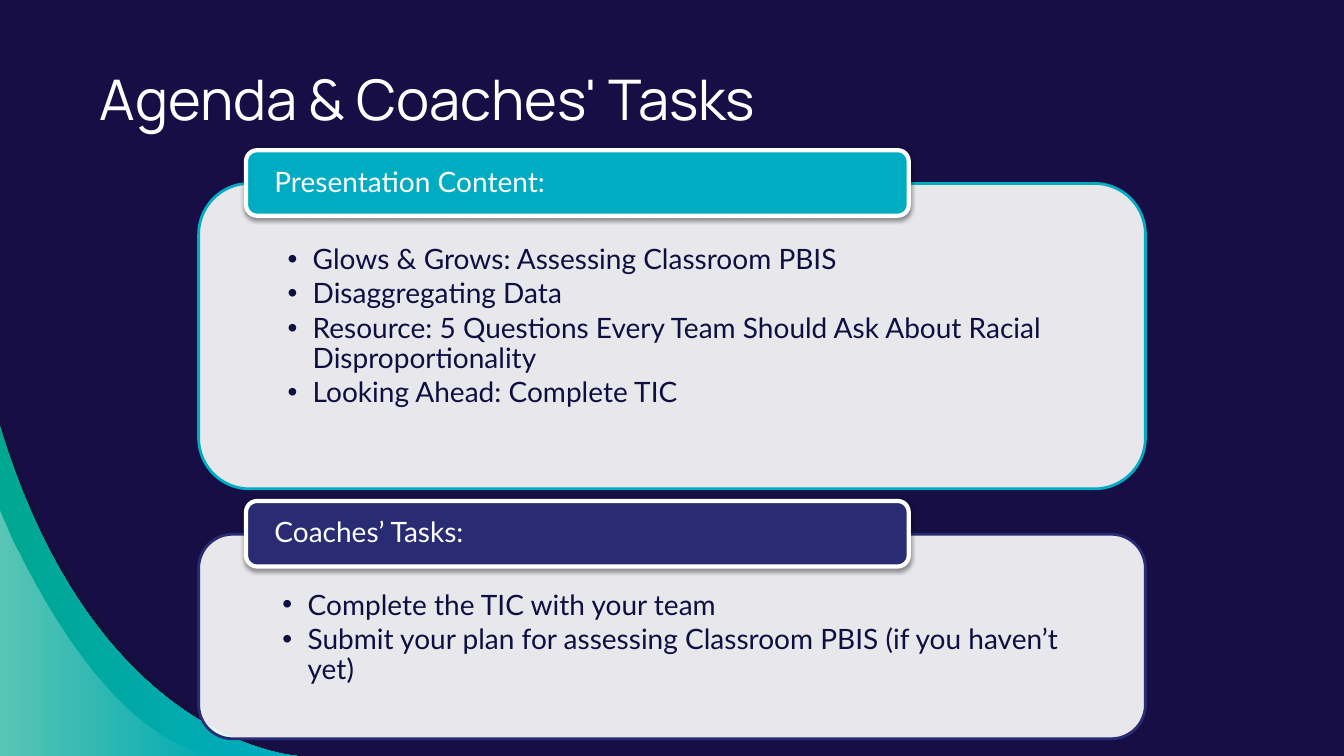
from lxml.etree import SubElement as Sub
from pptx import Presentation
from pptx.dml.color import RGBColor as RGB
from pptx.enum.shapes import MSO_SHAPE as Shape
from pptx.enum.text import MSO_ANCHOR as Anchor, MSO_AUTO_SIZE as Auto, PP_ALIGN as Align
from pptx.oxml.ns import qn
from pptx.util import Inches, Pt

NAVY = RGB(0x16, 0x0E, 0x44)
SHADE = RGB(0x12, 0x10, 0x2F)
CYAN = RGB(0x00, 0xAC, 0xC2)
GREEN = RGB(0x00, 0xA7, 0x91)
INDIGO = RGB(0x29, 0x2C, 0x73)
INK = RGB(0x0D, 0x0F, 0x41)
WHITE = RGB(0xFF, 0xFF, 0xFF)
BLACK = RGB(0, 0, 0)

WIDE, HIGH = 13.33, 7.5
STEPS = 40


def place(shape, left, top, width, height):
    shape.left, shape.top = Inches(left), Inches(top)
    shape.width, shape.height = Inches(width), Inches(height)


def write(par, text, size=20, font="Lato", color=WHITE, line=0.9, after=0):
    par.alignment = Align.LEFT
    par.line_spacing = line
    par.space_before = Pt(0)
    par.space_after = Pt(after)
    run = par.add_run()
    run.text = text
    run.font.size = Pt(size)
    run.font.name = font
    run.font.color.rgb = color


def frame(shape, anchor, left, top, right, bottom):
    box = shape.text_frame
    box.word_wrap = True
    box.auto_size = Auto.NONE
    box.vertical_anchor = anchor
    box.margin_left, box.margin_top = Inches(left), Inches(top)
    box.margin_right, box.margin_bottom = Inches(right), Inches(bottom)
    return box


def fade(shape, *shares):
    tones = list(shape.element.spPr.iter(qn("a:srgbClr")))
    for tone, share in zip(tones, shares):
        Sub(tone, qn("a:alpha"), val=str(share * 1000))


def shadow(shape):
    glow = shape.element.spPr.find(qn("a:effectLst"))
    drop = Sub(glow, qn("a:outerShdw"), blurRad=str(Pt(3.1)), dist=str(Pt(1.6)),
               dir="5400000", algn="ctr", rotWithShape="0")
    tone = Sub(drop, qn("a:srgbClr"), val=str(BLACK))
    Sub(tone, qn("a:alpha"), val="38000")


def bullet(par):
    props = par._p.get_or_add_pPr()
    props.set("marL", str(Inches(0.25)))
    props.set("indent", str(Inches(-0.25)))
    Sub(props, qn("a:buFont"), typeface="Arial")
    Sub(props, qn("a:buChar"), char="•")


def curve(ends):
    for step in range(STEPS + 1):
        t = step / STEPS
        parts = ((1 - t) ** 3, 3 * t * (1 - t) ** 2, 3 * t * t * (1 - t), t ** 3)
        yield tuple(Inches(sum(p * e[axis] for p, e in zip(parts, ends)))
                    for axis in (0, 1))


def wave(slide, ends, colors, shares):
    first, *rest = curve(ends)
    build = slide.shapes.build_freeform(*first)
    build.add_line_segments(rest + [(0, Inches(HIGH))], close=True)
    shape = build.convert_to_shape()
    shape.shadow.inherit = False
    shape.line.fill.background()
    if len(colors) == 1:
        shape.fill.solid()
        shape.fill.fore_color.rgb = colors[0]
    else:
        shape.fill.gradient()
        shape.fill.gradient_angle = 0
        for stop, color in zip(shape.fill.gradient_stops, colors):
            stop.color.rgb = color
    fade(shape, *shares)


def corner(slide):
    wave(slide, [(0, 4.13), (0.98, 7.39), (3.03, HIGH), (3.03, HIGH)], [SHADE], [54])
    wave(slide, [(0, 4.22), (0.95, 7.39), (2.95, HIGH), (2.95, HIGH)], [GREEN, CYAN], [])
    wave(slide, [(0, 5.06), (0, 5.06), (0.91, 7.35), (2.16, HIGH)], [WHITE, WHITE], [36, 0])


def panel(slide, box, fill, line, weight):
    shape = slide.shapes.add_shape(Shape.ROUNDED_RECTANGLE, *map(Inches, box))
    shape.shadow.inherit = False
    shape.fill.solid()
    shape.fill.fore_color.rgb = fill
    shape.line.color.rgb = line
    shape.line.width = Pt(weight)
    return shape


def card(slide, body, box, color, head, items):
    left, top, width, height = box
    back = panel(slide, box, WHITE, color, 2)
    fade(back, 90)
    back.element.addnext(body.element)
    pad = 0.05 * height
    place(body, left + pad, top + pad, width - 2 * pad, height - 2 * pad)
    text = frame(body, Anchor.TOP, 0.73, 0.46, 0.73, 0.16)
    for spot, item in enumerate(items):
        par = text.add_paragraph() if spot else text.paragraphs[0]
        par.level = 1
        bullet(par)
        write(par, item, color=INK, after=3)
    tab = panel(slide, (left + 0.47, top - 0.33, 0.7 * width, 0.65), color, WHITE, 3)
    shadow(tab)
    label = frame(tab, Anchor.MIDDLE, 0.25, 0, 0.25, 0)
    write(label.paragraphs[0], head)


def title(slide, text):
    shape = slide.shapes.title
    place(shape, 0.89, 0.51, 10.26, 0.92)
    box = frame(shape, Anchor.MIDDLE, 0.1, 0.1, 0.1, 0.1)
    write(box.paragraphs[0], text, size=40, font="Manrope", line=1)


def main():
    deck = Presentation()
    deck.slide_width, deck.slide_height = Inches(WIDE), Inches(HIGH)
    slide = deck.slides.add_slide(deck.slide_layouts[3])
    slide.background.fill.solid()
    slide.background.fill.fore_color.rgb = NAVY
    upper, lower = slide.placeholders[1], slide.placeholders[2]
    corner(slide)
    title(slide, "Agenda & Coaches' Tasks")
    card(slide, upper, (1.97, 1.82, 9.39, 3.03), CYAN, "Presentation Content:", [
        "Glows & Grows: Assessing Classroom PBIS",
        "Disaggregating Data",
        "Resource: 5 Questions Every Team Should Ask About Racial Disproportionality",
        "Looking Ahead: Complete TIC",
    ])
    card(slide, lower, (1.97, 5.3, 9.39, 2.03), INDIGO, "Coaches’ Tasks:", [
        "Complete the TIC with your team",
        "Submit your plan for assessing Classroom PBIS (if you haven’t yet)",
    ])
    deck.save("out.pptx")


if __name__ == "__main__":
    main()
